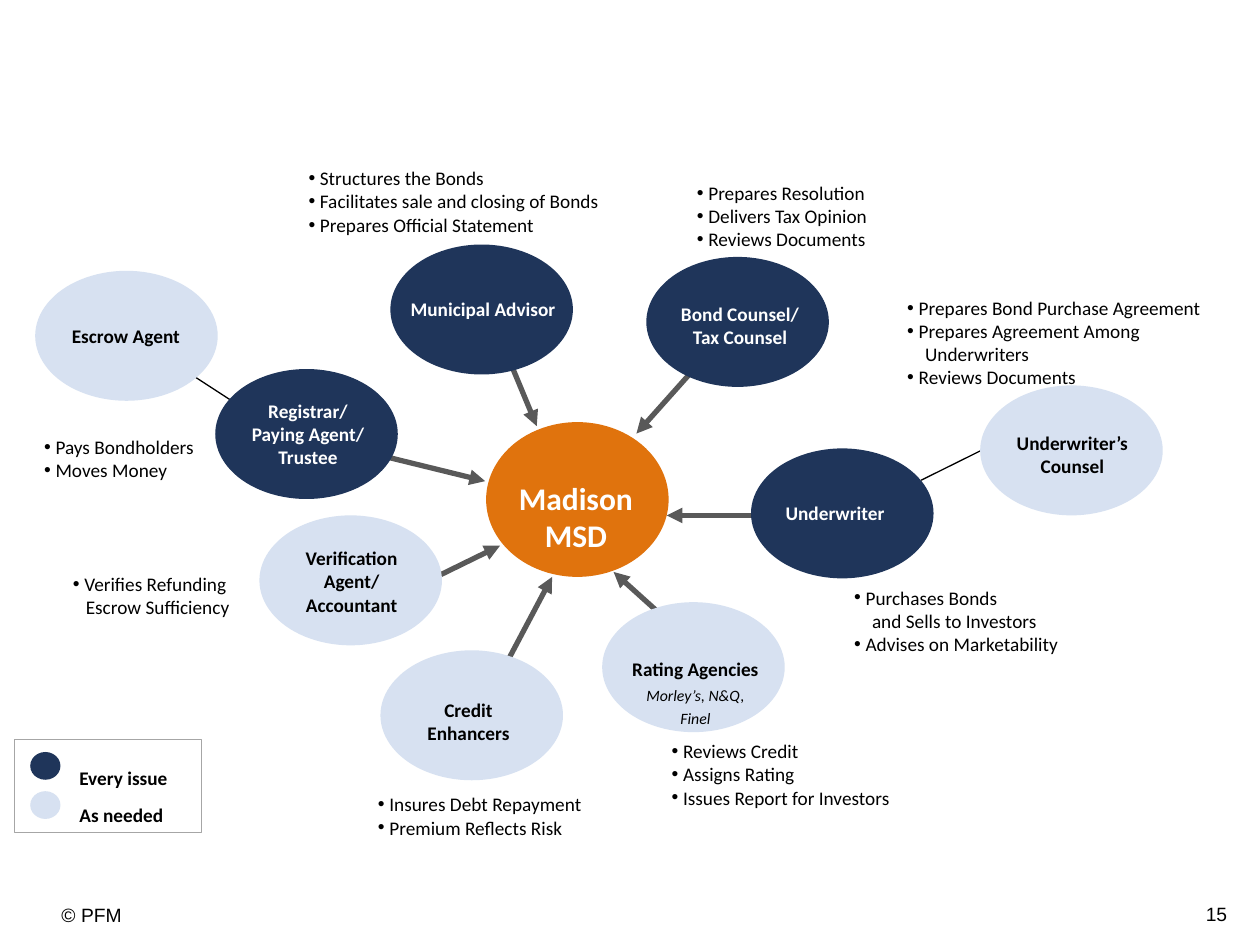
import dataclasses

import pptx
import pptx.dml.color
import pptx.enum.shapes
import pptx.enum.text
import pptx.oxml.xmlchemy
import pptx.util
from lxml import etree
from pptx.util import Cm


@dataclasses.dataclass(frozen=True)
class Theme:
    navy: str = "1F355A"
    pale: str = "D7E1F1"
    orange: str = "E0730D"
    arrow: str = "595959"
    frame: str = "A6A6A6"
    black: str = "000000"
    white: str = "FFFFFF"
    body: float = 11
    hub: float = 18
    small: float = 9


theme = Theme()
rgb = pptx.dml.color.RGBColor.from_string
PT = pptx.util.Pt
ALIGN = pptx.enum.text.PP_ALIGN
SHAPE = pptx.enum.shapes.MSO_SHAPE
A = "{http://schemas.openxmlformats.org/drawingml/2006/main}"
BULLET = "• "

prs = pptx.Presentation()
prs.slide_width, prs.slide_height = Cm(25.4), Cm(19.05)
s = prs.slides.add_slide(prs.slide_layouts[6])


def write(text, box, size=theme.body, color=theme.black, bold=False, font="Calibri",
          align=ALIGN.LEFT, insets=(0, 0.1), after=0, hang=0.23):
    tf = s.shapes.add_textbox(*map(Cm, box)).text_frame
    tf.word_wrap = True
    tf.margin_left = tf.margin_right = Cm(insets[0])
    tf.margin_top = tf.margin_bottom = Cm(insets[1])
    listed = text.startswith(BULLET)
    for i, line in enumerate(text.split("\n")):
        p = tf.paragraphs[0] if i == 0 else tf.add_paragraph()
        p.alignment = align
        p.space_after = PT(after)
        if line.startswith(BULLET):
            pPr = p._p.get_or_add_pPr()
            pPr.set("marL", str(Cm(0.23)))
            pPr.set("indent", str(-Cm(0.23)))
            etree.SubElement(pPr, A + "buFont", typeface="Arial")
            etree.SubElement(pPr, A + "buChar", char="•")
        elif listed:
            p._p.get_or_add_pPr().set("marL", str(Cm(hang)))
        r = p.add_run()
        r.text = line.removeprefix(BULLET)
        r.font.name, r.font.size, r.font.bold = font, PT(size), bold
        r.font.color.rgb = rgb(color)
    return tf


def add_ellipse(box, fill):
    sp = s.shapes.add_shape(SHAPE.OVAL, *map(Cm, box))
    sp.shadow.inherit = False
    sp.fill.solid()
    sp.fill.fore_color.rgb = rgb(fill)
    sp.line.fill.background()


write("© PFM", (1.24, 18.21, 3.53, 0.69), font="Arial", insets=(0, 0))
write("15", (23.9, 18.06, 1.09, 1.02), font="Arial", align=ALIGN.RIGHT, insets=(0.25, 0.13))

add_ellipse((9.8, 8.51, 3.68, 3.12), theme.orange)

arrows = [
    (9.96, 13.84, 11.13, 11.63),
    (7.09, 9.04, 9.78, 9.7),
    (7.75, 12.14, 10.08, 11),
    (10.11, 6.88, 10.82, 8.59),
    (14.58, 6.78, 12.83, 8.74),
    (15.88, 10.39, 13.44, 10.39),
    (14, 13, 12.37, 11.53),
]
links = [(19.76, 9.09, 18.57, 9.68), (3.61, 7.39, 4.78, 8.15)]
for ends in arrows + links:
    is_arrow = ends in arrows
    cxn = s.shapes.add_connector(pptx.enum.shapes.MSO_CONNECTOR.STRAIGHT, *map(Cm, ends))
    cxn.line.color.rgb = rgb(theme.arrow if is_arrow else theme.black)
    cxn.line.width = PT(3 if is_arrow else 0.75)
    if is_arrow:
        etree.SubElement(cxn.line._get_or_add_ln(), A + "tailEnd", type="triangle")
    etree.SubElement(cxn._element.spPr, A + "effectLst")

parties = [
    ("Credit\nEnhancers", theme.pale, (7.67, 13.11), (8.05, 13.97, 2.79, 1.17)),
    ("Verification\nAgent/\nAccountant", theme.pale, (5.23, 10.39), (5.77, 10.92, 2.64, 1.65)),
    ("Escrow Agent", theme.pale, (0.71, 5.46), (1.04, 6.43, 3, 0.71)),
    ("Underwriter", theme.navy, (15.14, 9.04), (15.49, 10.01, 2.69, 0.71)),
    ("Bond Counsel/\nTax Counsel", theme.navy, (13.03, 5.18), (13.18, 5.99, 3.48, 1.07)),
    ("Municipal Advisor", theme.navy, (7.87, 4.93), (8, 5.89, 3.48, 0.86)),
    ("Registrar/\nPaying Agent/\nTrustee", theme.navy, (4.34, 7.44), (4.42, 7.95, 3.58, 1.65)),
    ("Underwriter’s\nCounsel", theme.pale, (19.76, 7.77), (20.12, 8.59, 3, 1.17)),
]
for name, fill, corner, box in parties:
    add_ellipse((*corner, 3.68, 2.62), fill)
    color = theme.white if fill == theme.navy else theme.black
    write(name, box, color=color, bold=True, align=ALIGN.CENTER)

add_ellipse((12.14, 12.14, 3.68, 2.62), theme.pale)
tf = write("Rating Agencies\nMorley’s, N&Q,\nFinel", (12.32, 13.16, 3.4, 2.18),
           bold=True, align=ALIGN.CENTER, after=2.7)
for p in tf.paragraphs[1:]:
    font = p.runs[0].font
    font.size, font.bold, font.italic = PT(theme.small), False, True

write("Madison\nMSD", (10.06, 9.55, 3.1, 1.24), size=theme.hub, color=theme.white,
      bold=True, align=ALIGN.CENTER)

write("Every issue\nAs needed", (1.6, 15.04, 2.4, 1.75), bold=True, insets=(0, 0.4), after=8.4)
for top, fill in [(15.16, theme.navy), (15.95, theme.pale)]:
    add_ellipse((0.61, top, 0.61, 0.56), fill)
sp = s.shapes.add_shape(SHAPE.RECTANGLE, Cm(0.3), Cm(14.91), Cm(3.76), Cm(1.88))
sp.shadow.inherit = False
sp.fill.background()
sp.line.color.rgb = rgb(theme.frame)
sp.line.width = PT(0.75)

duties = [
    ("• Prepares Resolution\n• Delivers Tax Opinion\n• Reviews Documents",
     (13.82, 3.53, 4.39, 1.65), 0.23),
    ("• Purchases Bonds\nand Sells to Investors\n• Advises on Marketability",
     (16.99, 11.68, 5.08, 1.65), 0.36),
    ("• Prepares Bond Purchase Agreement\n• Prepares Agreement Among\n"
     "Underwriters\n• Reviews Documents", (18.06, 5.84, 7.54, 2.11), 0.36),
    ("• Reviews Credit\n• Assigns Rating\n• Issues Report for Investors",
     (13.31, 14.78, 5.41, 1.65), 0.23),
    ("• Insures Debt Repayment\n• Premium Reflects Risk", (7.39, 15.85, 5.13, 1.17), 0.23),
    ("• Pays Bondholders\n• Moves Money", (0.66, 8.64, 3.91, 1.17), 0.23),
    ("• Verifies Refunding\nEscrow Sufficiency", (1.24, 11.4, 4.14, 1.17), 0.26),
    ("• Structures the Bonds\n• Facilitates sale and closing of Bonds\n"
     "• Prepares Official Statement", (5.99, 3.23, 7.47, 1.65), 0.23),
]
for text, box, hang in duties:
    write(text, box, insets=(0.23, 0.13), hang=hang)

prs.save("out.pptx")
